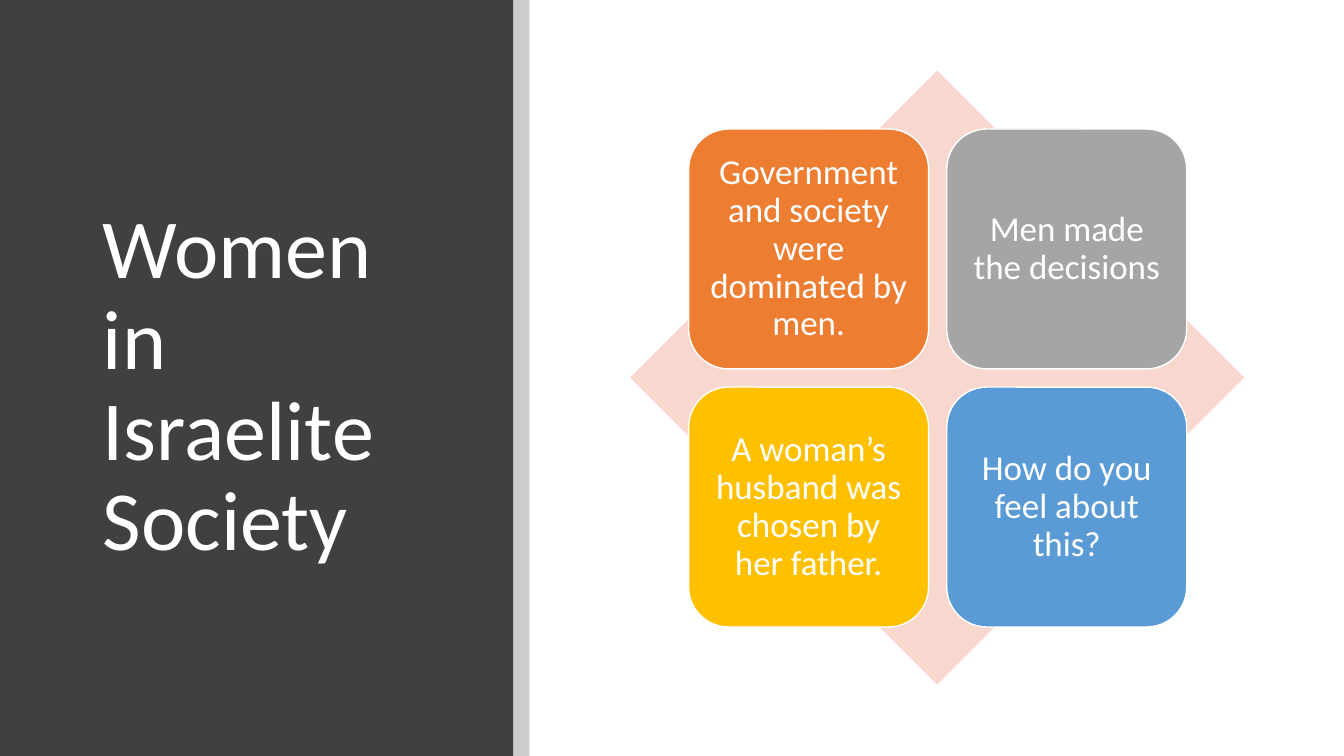
from dataclasses import dataclass

from lxml.etree import SubElement
from pptx import Presentation
from pptx.dml.color import RGBColor
from pptx.enum.shapes import MSO_SHAPE
from pptx.enum.text import MSO_ANCHOR, MSO_AUTO_SIZE, PP_ALIGN
from pptx.oxml.ns import qn
from pptx.shapes.autoshape import Shape
from pptx.util import Inches, Pt

WHITE = "FFFFFF"
FONT = "Calibri"
PANEL = 5.09
SIDE = 2.38
STEP = 2.56
LEFT, TOP = 6.83, 1.28


@dataclass
class Tile:
    """A rounded square in the two by two grid."""
    text: str
    fill: str


TILES = [
    Tile("Government and society were dominated by men.", "ED7D31"),
    Tile("Men made the decisions", "A5A5A5"),
    Tile("A woman’s husband was chosen by her father.", "FFC000"),
    Tile("How do you feel about this?", "5B9BD5"),
]


def color(code: str) -> RGBColor:
    """Turn a hex string into a colour."""
    return RGBColor.from_string(code)


def add_block(shapes, kind: MSO_SHAPE, x: float, y: float, w: float,
              h: float, fill: str) -> Shape:
    """Draw a flat shape with no outline."""
    block = shapes.add_shape(kind, Inches(x), Inches(y), Inches(w), Inches(h))
    block.shadow.inherit = False
    block.fill.solid()
    block.fill.fore_color.rgb = color(fill)
    block.line.fill.background()
    return block


def set_text(shape: Shape, text: str, size: int, align: PP_ALIGN) -> None:
    """Write one white paragraph, centred in height."""
    frame = shape.text_frame
    frame.text = text
    frame.word_wrap = True
    frame.auto_size = MSO_AUTO_SIZE.NONE
    frame.vertical_anchor = MSO_ANCHOR.MIDDLE
    para = frame.paragraphs[0]
    para.alignment = align
    para.line_spacing = 0.9
    font = para.runs[0].font
    font.name = FONT
    font.size = Pt(size)
    font.color.rgb = color(WHITE)


def add_tile(shapes, tile: Tile, x: float, y: float) -> None:
    """Draw one tile with its text."""
    box = add_block(shapes, MSO_SHAPE.ROUNDED_RECTANGLE, x, y, SIDE, SIDE,
                    tile.fill)
    box.line.color.rgb = color(WHITE)
    box.line.width = Pt(1)
    set_text(box, tile.text, 25, PP_ALIGN.CENTER)
    frame = box.text_frame
    frame.margin_left = frame.margin_right = Inches(0.1)
    frame.margin_top = frame.margin_bottom = Inches(0.1)


def set_alpha(shape: Shape, share: int) -> None:
    """Make a solid fill opaque by the given percentage."""
    tint = shape.element.spPr.find(qn("a:solidFill")).find(qn("a:srgbClr"))
    SubElement(tint, qn("a:alpha")).set("val", str(share * 1000))


def main() -> None:
    """Build and save the slide."""
    deck = Presentation()
    deck.slide_width, deck.slide_height = Inches(13.33), Inches(7.5)
    slide = deck.slides.add_slide(deck.slide_layouts[5])
    shapes = slide.shapes

    title = shapes.title
    title.left, title.top = Inches(0.92), Inches(0.89)
    title.width, title.height = Inches(3.65), Inches(5.91)
    set_text(title, "Women in Israelite Society", 60, PP_ALIGN.LEFT)

    panel = add_block(shapes, MSO_SHAPE.RECTANGLE, 0, 0, PANEL, 7.5, "404040")
    title.element.addprevious(panel.element)
    strip = add_block(shapes, MSO_SHAPE.RECTANGLE, PANEL, 0, 0.16, 7.5,
                      "000000")
    set_alpha(strip, 20)

    matrix = shapes.add_group_shape().shapes
    add_block(matrix, MSO_SHAPE.DIAMOND, 6.25, 0.7, 6.09, 6.09, "F8D7CE")
    for index, tile in enumerate(TILES):
        row, col = divmod(index, 2)
        add_tile(matrix, tile, LEFT + col * STEP, TOP + row * STEP)

    deck.save("out.pptx")


if __name__ == "__main__":
    main()
